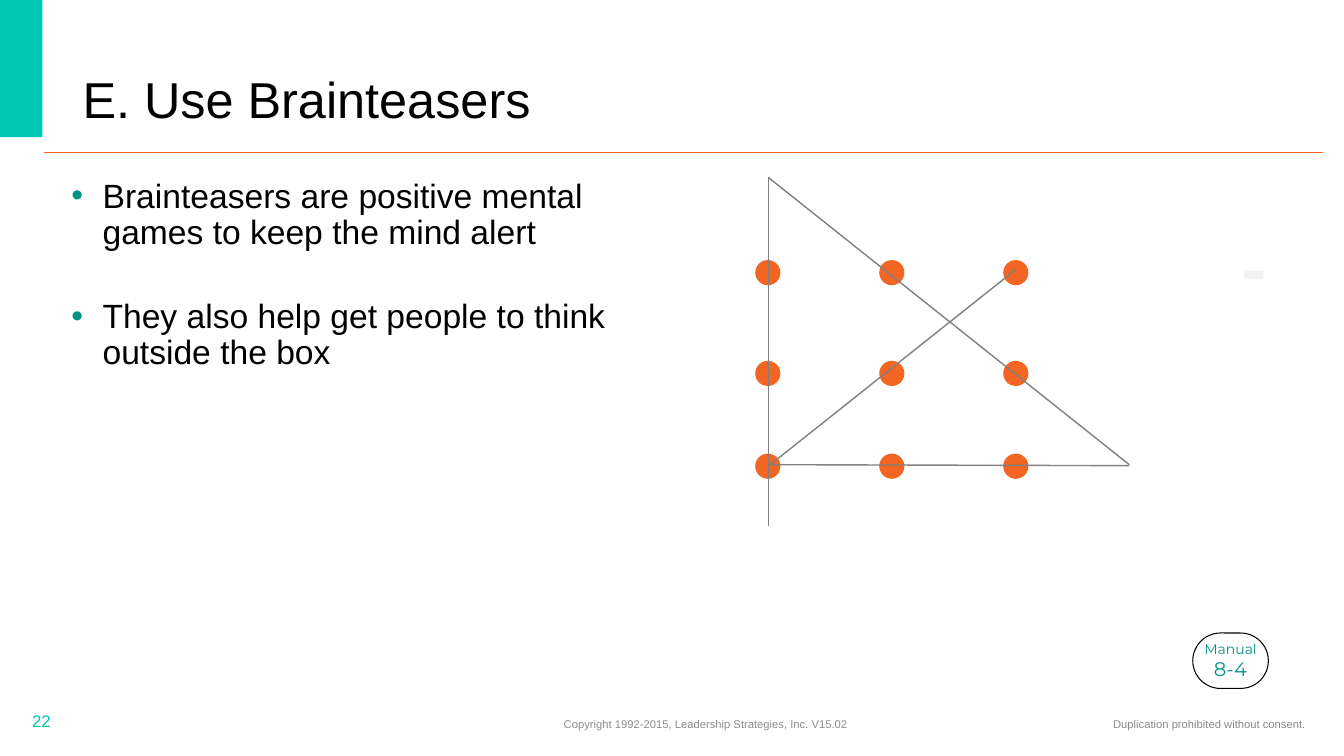
import pptx
import pptx.util
import pptx.dml.color
import pptx.enum.shapes
import pptx.enum.text
import lxml.etree

PX = 9144
ANCHOR = pptx.enum.text.MSO_ANCHOR
ALIGN = pptx.enum.text.PP_ALIGN
SHAPE = pptx.enum.shapes.MSO_SHAPE
STRAIGHT = pptx.enum.shapes.MSO_CONNECTOR.STRAIGHT
DRAWING = "{http://schemas.openxmlformats.org/drawingml/2006/main}"
rgb = pptx.dml.color.RGBColor.from_string


def add_run(paragraph, text, size, color, font="Arial", bold=False):
    run = paragraph.add_run()
    run.text = text
    run.font.size = pptx.util.Pt(size)
    run.font.name = font
    run.font.bold = bold
    run.font.color.rgb = rgb(color)


def add_line(start, end, color, width):
    line = slide.shapes.add_connector(STRAIGHT, *[v * PX for v in start + end])
    line.line.color.rgb = rgb(color)
    line.line.width = pptx.util.Pt(width)
    lxml.etree.SubElement(line._element.spPr, DRAWING + "effectLst")


deck = pptx.Presentation()
deck.slide_width = 1333 * PX
deck.slide_height = 750 * PX
slide = deck.slides.add_slide(deck.slide_layouts[6])

accent = slide.shapes.add_shape(SHAPE.RECTANGLE, -2 * PX, -2 * PX, 44 * PX, 138 * PX)
accent.shadow.inherit = False
accent.fill.solid()
accent.fill.fore_color.rgb = rgb("00C7B1")
accent.line.fill.background()
add_line((44, 151), (1312, 151), "F26522", 0.5)

labels = [
    ("E. Use Brainteasers", (72, 57, 812, 76), 36, "000000", ALIGN.LEFT, ANCHOR.BOTTOM),
    ("22", (22, 695, 300, 40), 12, "00C7B1", ALIGN.LEFT, ANCHOR.MIDDLE),
    ("Copyright 1992-2015, Leadership Strategies, Inc. V15.02", (362, 698, 676, 40), 8, "8C8C8C",
     ALIGN.CENTER, ANCHOR.MIDDLE),
    ("Duplication prohibited without consent.", (742, 698, 563, 40), 8, "898989",
     ALIGN.RIGHT, ANCHOR.MIDDLE),
]
for text, area, size, color, align, anchor in labels:
    label = slide.shapes.add_textbox(*[v * PX for v in area]).text_frame
    label.word_wrap = True
    label.vertical_anchor = anchor
    label.paragraphs[0].alignment = align
    if size == 36:
        label.paragraphs[0].line_spacing = 0.9
    add_run(label.paragraphs[0], text, size, color)

benefits = slide.shapes.add_textbox(61 * PX, 173 * PX, 587 * PX, 503 * PX).text_frame
benefits.word_wrap = True
for index, text in enumerate([
    "Brainteasers are positive mental games to keep the mind alert",
    "They also help get people to think outside the box",
]):
    benefit = benefits.add_paragraph() if index else benefits.paragraphs[0]
    benefit.line_spacing = 0.9
    benefit.space_before = pptx.util.Pt(16 if index else 0)
    benefit.space_after = pptx.util.Pt(18)
    properties = benefit._p.get_or_add_pPr()
    properties.set("marL", str(31 * PX))
    properties.set("indent", str(-31 * PX))
    bullet_color = lxml.etree.SubElement(properties, DRAWING + "buClr")
    lxml.etree.SubElement(bullet_color, DRAWING + "srgbClr", val="009383")
    lxml.etree.SubElement(properties, DRAWING + "buFont", typeface="Arial")
    lxml.etree.SubElement(properties, DRAWING + "buChar", char="•")
    add_run(benefit, text, 24, "000000")

for top in (258, 358, 450):
    for column in range(3):
        dot = slide.shapes.add_shape(
            SHAPE.OVAL, (749 + 123 * column) * PX, top * PX, 25 * PX, 25 * PX)
        dot.shadow.inherit = False
        dot.fill.solid()
        dot.fill.fore_color.rgb = rgb("F26522")
        dot.line.fill.background()

for start, end in [
    ((762, 522), (762, 176)),
    ((1120, 461), (762, 176)),
    ((762, 461), (1120, 462)),
    ((764, 461), (1008, 267)),
]:
    add_line(start, end, "808080", 1)

manual = slide.shapes.add_shape(
    SHAPE.ROUNDED_RECTANGLE, 1183 * PX, 628 * PX, 75 * PX, 55 * PX)
manual.adjustments[0] = 0.5
manual.shadow.inherit = False
manual.fill.solid()
manual.fill.fore_color.rgb = rgb("FFFFFF")
manual.line.color.rgb = rgb("000000")
manual.line.width = pptx.util.Pt(0.75)
manual.text_frame.word_wrap = False
manual.text_frame.vertical_anchor = ANCHOR.MIDDLE
reference = manual.text_frame.paragraphs[0]
reference.alignment = ALIGN.CENTER
add_run(reference, "Manual", 10, "009383", "Montserrat")
reference.add_line_break()
add_run(reference, "8-4", 14, "009383", "Montserrat")

dash = slide.shapes.add_textbox(1221 * PX, 221 * PX, 43 * PX, 91 * PX).text_frame
dash.word_wrap = False
add_run(dash.paragraphs[0], "-", 48, "F2F2F2", "Montserrat", True)

deck.save("out.pptx")
